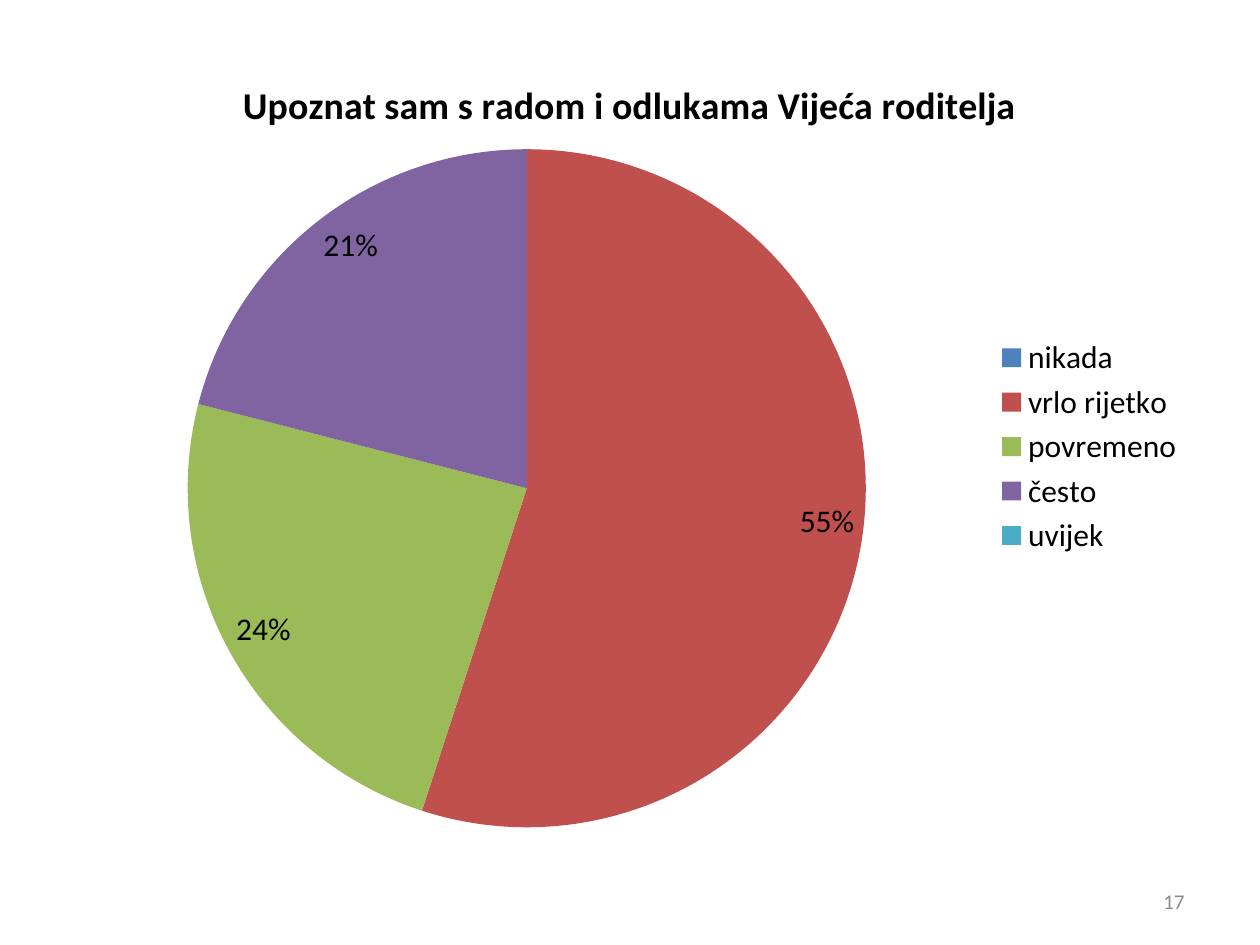
from lxml import etree
from pptx import Presentation
from pptx import util as u
from pptx.chart.data import CategoryChartData
from pptx.dml.color import RGBColor
from pptx.enum import chart as charts, text
from pptx.oxml.ns import qn

ANSWERS = {
    "nikada": (None, "4F81BD"),
    "vrlo rijetko": (55, "C0504D"),
    "povremeno": (24, "9BBB59"),
    "često": (21, "8064A2"),
    "uvijek": (None, "4BACC6"),
}


def color(value):
    """Turn a hex string into a colour."""
    return RGBColor.from_string(value)


def format_font(font, name="Calibri", size=18, bold=False, fill="000000"):
    """Apply typeface, size, weight and colour to a font."""
    font.name, font.size, font.bold = name, u.Pt(size), bold
    font.color.rgb = color(fill)


def write(frame, words, align=text.PP_ALIGN.CENTER, **font_format):
    """Put formatted text into a text frame."""
    paragraph = frame.paragraphs[0]
    paragraph.alignment = align
    run = paragraph.add_run()
    run.text = words
    format_font(run.font, **font_format)


def place_plot(chart, **fractions):
    """Fix the inner plot area at fractions of the chart size."""
    plot_area = chart._chartSpace.find(".//" + qn("c:plotArea"))
    for old in plot_area.findall(qn("c:layout")):
        plot_area.remove(old)
    layout = etree.Element(qn("c:layout"))
    manual = etree.SubElement(layout, qn("c:manualLayout"))
    settings = {"layoutTarget": "inner", "xMode": "edge", "yMode": "edge", **fractions}
    for tag, value in settings.items():
        etree.SubElement(manual, qn("c:" + tag)).set("val", str(value))
    plot_area.insert(0, layout)


class SlideBuilder:
    """Hold the style and the current slide."""

    def __init__(self, slide, font="Calibri"):
        """Keep the slide and its typeface."""
        self.slide, self.font = slide, font

    def pie(self, box, title, answers):
        """Add a titled pie chart with percent labels and a legend."""
        data = CategoryChartData()
        data.categories = list(answers)
        data.add_series("Series 1", [value for value, _ in answers.values()])
        chart = self.slide.shapes.add_chart(
            charts.XL_CHART_TYPE.PIE, *map(u.Inches, box), data).chart
        format_font(chart.font, name=self.font)
        chart.has_title = True
        write(chart.chart_title.text_frame, title, name=self.font, size=21.6, bold=True)
        chart.has_legend = True
        chart.legend.position = charts.XL_LEGEND_POSITION.RIGHT
        chart.legend.include_in_layout = False
        format_font(chart.legend.font, name=self.font)
        plot = chart.plots[0]
        plot.vary_by_categories = True
        for index, (_, fill) in enumerate(answers.values()):
            point = plot.series[0].points[index].format.fill
            point.solid()
            point.fore_color.rgb = color(fill)
        plot.has_data_labels = True
        labels = plot.data_labels
        labels.show_percentage, labels.show_value = True, False
        labels.number_format, labels.number_format_is_linked = "0%", False
        labels.position = charts.XL_LABEL_POSITION.INSIDE_END
        format_font(labels.font, name=self.font)
        place_plot(chart, x=0.11, y=0.126, w=0.598, h=0.853)

    def page_number(self, box, number):
        """Add the slide number, right aligned."""
        frame = self.slide.shapes.add_textbox(*map(u.Inches, box)).text_frame
        frame.word_wrap = True
        frame.vertical_anchor = text.MSO_ANCHOR.MIDDLE
        write(frame, number, text.PP_ALIGN.RIGHT, name=self.font, size=12, fill="8C8C8C")


def main():
    """Build and save the slide."""
    presentation = Presentation()
    presentation.slide_width, presentation.slide_height = u.Inches(10), u.Inches(7.5)
    builder = SlideBuilder(presentation.slides.add_slide(presentation.slide_layouts[6]))
    builder.pie((0.5, 0.39, 9, 6.31), "Upoznat sam s radom i odlukama Vijeća roditelja", ANSWERS)
    builder.page_number((7.17, 6.95, 2.33, 0.4), "17")
    presentation.save("out.pptx")


if __name__ == "__main__":
    main()
